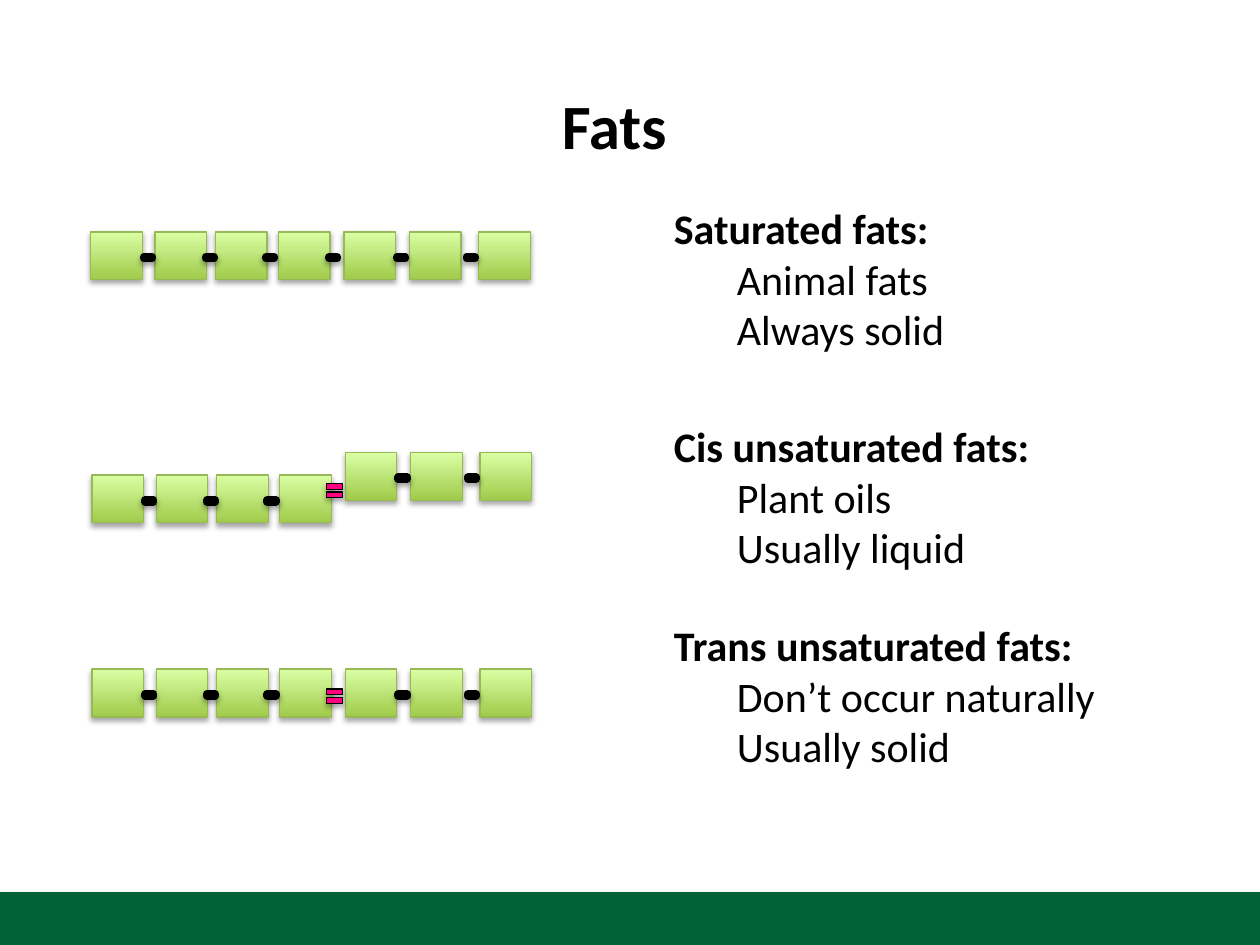
from lxml.etree import SubElement
from pptx import Presentation
from pptx.dml.color import RGBColor
from pptx.enum.shapes import MSO_SHAPE
from pptx.enum.text import MSO_ANCHOR, MSO_AUTO_SIZE, PP_ALIGN
from pptx.oxml.ns import qn
from pptx.util import Inches, Pt

SQUARE_OFFSETS = [0, 0.51, 0.99, 1.49, 2.01, 2.53, 3.08]
BOND_OFFSETS = [0.41, 0.9, 1.38, 1.88, 2.42, 2.97]
DOUBLE_BOND_OFFSET = 1.84
DOUBLE_BOND_INDEX = 3


def color(value):
    """Turn a hex string into a colour."""
    return RGBColor.from_string(value)


def write(paragraph, text, size=24, bold=False, align=PP_ALIGN.LEFT, indent=0):
    """Write formatted text into a paragraph."""
    paragraph.alignment = align
    if indent:
        paragraph._p.get_or_add_pPr().set("marL", str(Inches(indent)))
    run = paragraph.add_run()
    run.text = text
    run.font.name = "Calibri"
    run.font.size = Pt(size)
    run.font.bold = bold
    run.font.color.rgb = color("000000")


class FatsSlide:
    """Hold the style and the current slide."""

    square_fill = ("A0CA4A", "DAFFA5")
    bond_fill = ("3F80CE", "A4C4FF")
    double_bond_fill = ("FF0080",)
    bar_fill = ("006036",)

    def __init__(self, slide):
        """Keep the slide to draw on."""
        self.slide = slide

    def shadow(self, shape):
        """Give a shape a soft shadow below it."""
        shape.shadow.inherit = False
        effects = shape._element.spPr.find(qn("a:effectLst"))
        outer = SubElement(effects, qn("a:outerShdw"), blurRad=str(Pt(3.1)),
                           dist=str(Pt(1.8)), dir="5400000", rotWithShape="0")
        black = SubElement(outer, qn("a:srgbClr"), val="000000")
        SubElement(black, qn("a:alpha"), val="35000")

    def shape(self, parent, kind, box, fill, line=None, width=0.75):
        """Add a preset shape with a plain or two-colour fill."""
        shape = parent.shapes.add_shape(kind, *map(Inches, box))
        if len(fill) == 1:
            shape.fill.solid()
            shape.fill.fore_color.rgb = color(fill[0])
        else:
            shape.fill.gradient()
            shape.fill.gradient_angle = 90
            for stop, value in zip(shape.fill.gradient_stops, fill):
                stop.color.rgb = color(value)
        if line:
            shape.line.color.rgb = color(line)
            shape.line.width = Pt(width)
        else:
            shape.line.fill.background()
        self.shadow(shape)

    def bar(self):
        """Add the band along the bottom edge."""
        self.shape(self.slide, MSO_SHAPE.RECTANGLE, (0, 7.08, 10, 0.42), self.bar_fill)

    def chain(self, left, tops, double_bond=False):
        """Add a grouped chain of squares joined by bonds."""
        group = self.slide.shapes.add_group_shape()
        for offset, top in zip(SQUARE_OFFSETS, tops):
            self.shape(group, MSO_SHAPE.RECTANGLE, (left + offset, top, 0.41, 0.38),
                       self.square_fill, "98B955")
        for index, offset in enumerate(BOND_OFFSETS):
            if double_bond and index == DOUBLE_BOND_INDEX:
                middle = (tops[index] + tops[index + 1]) / 2
                box = (left + DOUBLE_BOND_OFFSET, middle + 0.12, 0.17, 0.19)
                self.shape(group, MSO_SHAPE.MATH_EQUAL, box, self.double_bond_fill, "000000")
            else:
                box = (left + offset, tops[index] + 0.18, 0.09, 0.05)
                self.shape(group, MSO_SHAPE.MATH_MINUS, box, self.bond_fill, "000000", 4.5)

    def text_box(self, box):
        """Add a wrapping text box and return its text frame."""
        frame = self.slide.shapes.add_textbox(*map(Inches, box)).text_frame
        frame.word_wrap = True
        return frame

    def title(self, text):
        """Add the centred title."""
        frame = self.text_box((2.86, 0.27, 4.03, 1.44))
        frame.vertical_anchor = MSO_ANCHOR.MIDDLE
        write(frame.paragraphs[0], text, size=36, bold=True, align=PP_ALIGN.CENTER)

    def description(self, top, width, heading, facts):
        """Add a bold heading with indented facts under it."""
        frame = self.text_box((5.25, top, width, 1.31))
        frame.auto_size = MSO_AUTO_SIZE.SHAPE_TO_FIT_TEXT
        write(frame.paragraphs[0], heading, bold=True)
        for fact in facts:
            write(frame.add_paragraph(), fact, indent=0.5)


def main():
    """Build and save the slide."""
    presentation = Presentation()
    presentation.slide_width = Inches(10)
    presentation.slide_height = Inches(7.5)
    fats = FatsSlide(presentation.slides.add_slide(presentation.slide_layouts[6]))
    fats.bar()
    fats.title("Fats")
    fats.chain(0.72, [1.84] * 7)
    fats.chain(0.73, [5.31] * 7, double_bond=True)
    fats.chain(0.73, [3.77] * 4 + [3.59] * 3, double_bond=True)
    fats.description(1.56, 2.38, "Saturated fats:", ["Animal fats", "Always solid"])
    fats.description(4.87, 4.19, "Trans unsaturated fats:",
                     ["Don’t occur naturally", "Usually solid"])
    fats.description(3.29, 4.19, "Cis unsaturated fats:", ["Plant oils", "Usually liquid"])
    presentation.save("out.pptx")


if __name__ == "__main__":
    main()
